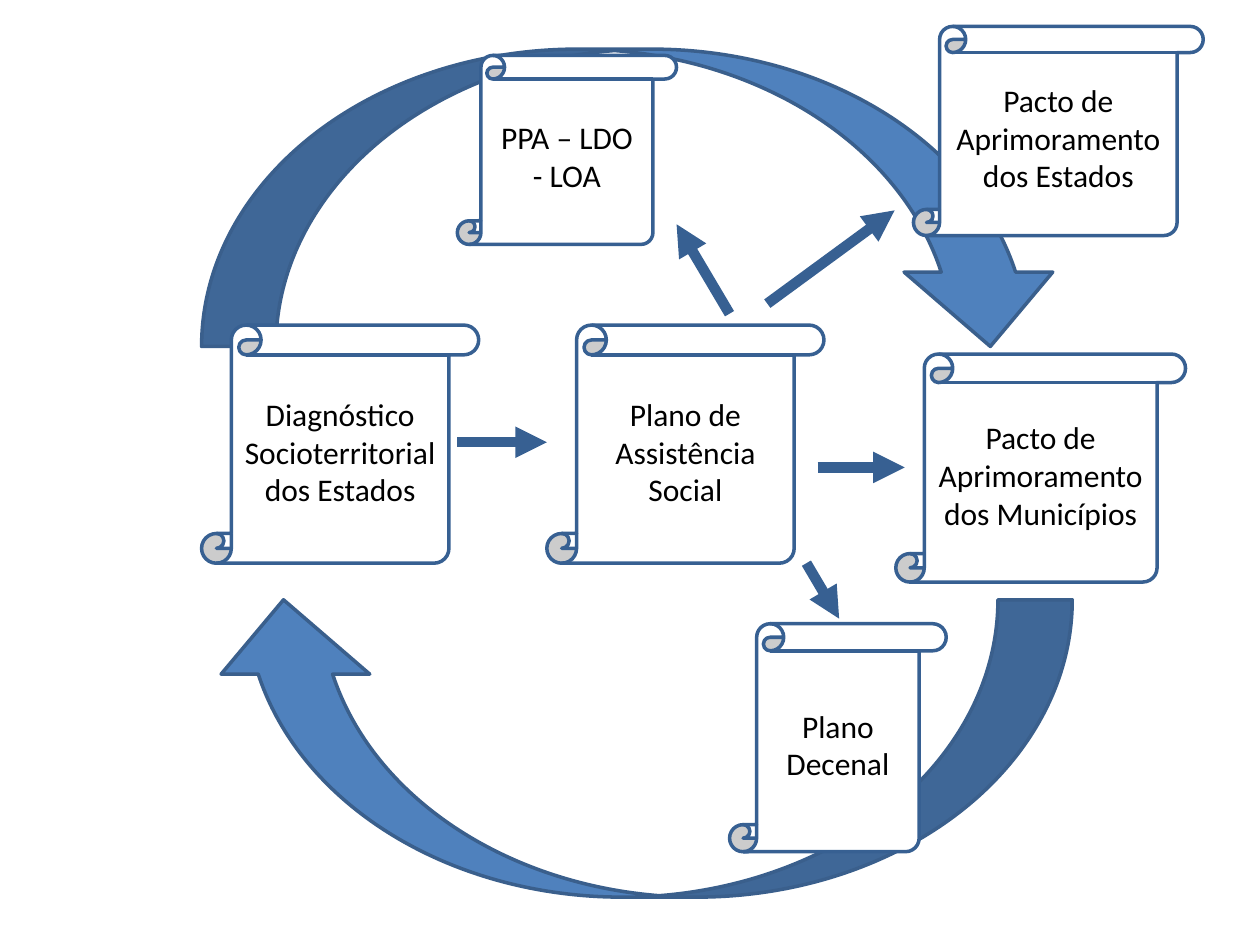
from typing import NamedTuple

from lxml import etree
from pptx import Presentation
from pptx.dml.color import RGBColor
from pptx.enum.shapes import MSO_CONNECTOR, MSO_SHAPE
from pptx.enum.text import MSO_ANCHOR, PP_ALIGN
from pptx.oxml.ns import qn
from pptx.util import Inches, Pt

CURVED_ARROW = MSO_SHAPE.CURVED_DOWN_ARROW
SCROLL = MSO_SHAPE.VERTICAL_SCROLL
STRAIGHT = MSO_CONNECTOR.STRAIGHT
MIDDLE = MSO_ANCHOR.MIDDLE
CENTER = PP_ALIGN.CENTER

WHITE, BLACK = "FFFFFF", "000000"
CYCLE_FILL, CYCLE_LINE, DARK_BLUE = "4F81BD", "3A5F8C", "376092"


class Box(NamedTuple):
    left: float
    top: float
    width: float
    height: float


class Document(NamedTuple):
    text: str
    box: Box


class Arrow(NamedTuple):
    x1: float
    y1: float
    x2: float
    y2: float


LOWER_CYCLE = Box(1.66, 4.76, 6.85, 2.36)
UPPER_CYCLE = Box(1.6, 0.39, 6.85, 2.36)

DOCUMENTS = [
    Document("Diagnóstico Socioterritorial dos Estados", Box(1.6, 2.58, 2.2, 1.89)),
    Document("Plano de Assistência Social", Box(4.34, 2.58, 2.2, 1.89)),
    Document("PPA – LDO - LOA", Box(3.63, 0.44, 1.74, 1.5)),
    Document("Pacto de Aprimoramento dos Estados", Box(7.25, 0.21, 2.3, 1.66)),
    Document("Pacto de Aprimoramento dos Municípios", Box(7.11, 2.81, 2.3, 1.81)),
    Document("Plano Decenal", Box(5.79, 4.95, 1.72, 1.81)),
]

ARROWS = [
    Arrow(3.63, 3.51, 4.34, 3.51),
    Arrow(5.79, 2.49, 5.37, 1.78),
    Arrow(6.09, 2.41, 7.1, 1.67),
    Arrow(6.49, 3.71, 7.18, 3.71),
    Arrow(6.4, 4.47, 6.66, 4.91),
]


def rgb(value: str) -> RGBColor:
    return RGBColor.from_string(value)


def add_box(slide, kind, box: Box, fill: str, line: str):
    """Add a filled, outlined preset shape without shadow."""
    sp = slide.shapes.add_shape(kind, *(Inches(v) for v in box))
    sp.shadow.inherit = False
    sp.fill.solid()
    sp.fill.fore_color.rgb = rgb(fill)
    sp.line.color.rgb = rgb(line)
    sp.line.width = Pt(2)
    return sp


def set_text(sp, text: str, *, size: float = 18, color: str = BLACK,
             font: str = "Calibri", align=CENTER, anchor=MIDDLE) -> None:
    tf = sp.text_frame
    tf.word_wrap = True
    tf.vertical_anchor = anchor
    p = tf.paragraphs[0]
    p.alignment = align
    r = p.add_run()
    r.text = text
    r.font.size = Pt(size)
    r.font.name = font
    r.font.color.rgb = rgb(color)


def add_document(slide, document: Document) -> None:
    sp = add_box(slide, SCROLL, document.box, WHITE, DARK_BLUE)
    set_text(sp, document.text)


def add_arrow(slide, arrow: Arrow) -> None:
    cxn = slide.shapes.add_connector(STRAIGHT, *(Inches(v) for v in arrow))
    cxn.line.color.rgb = rgb(DARK_BLUE)
    cxn.line.width = Pt(6)
    etree.SubElement(cxn.line._get_or_add_ln(), qn("a:tailEnd"), type="triangle")
    etree.SubElement(cxn._element.spPr, qn("a:effectLst"))


def main() -> None:
    prs = Presentation()
    prs.slide_width, prs.slide_height = Inches(10), Inches(7.5)
    slide = prs.slides.add_slide(prs.slide_layouts[6])

    lower = add_box(slide, CURVED_ARROW, LOWER_CYCLE, CYCLE_FILL, CYCLE_LINE)
    lower.rotation = 180
    add_box(slide, CURVED_ARROW, UPPER_CYCLE, CYCLE_FILL, CYCLE_LINE)
    for document in DOCUMENTS:
        add_document(slide, document)
    for arrow in ARROWS:
        add_arrow(slide, arrow)

    prs.save("out.pptx")


if __name__ == "__main__":
    main()
